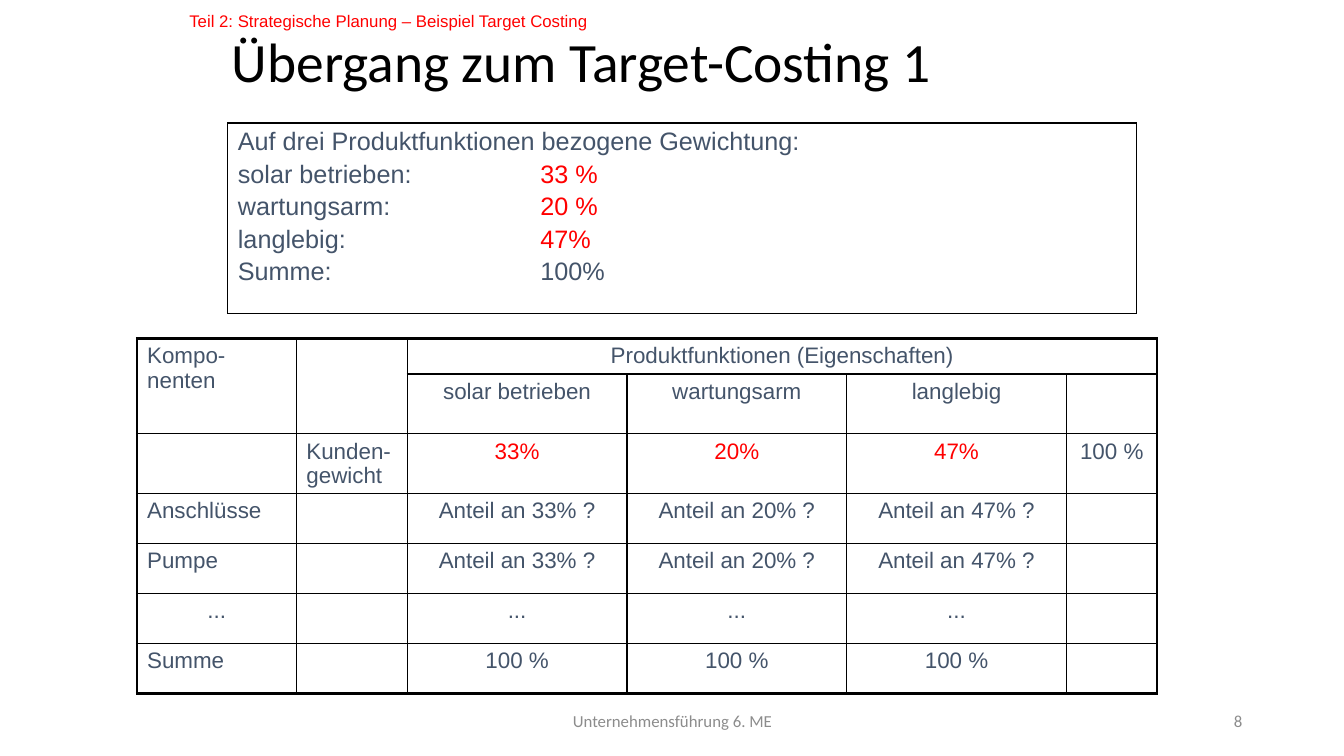
from dataclasses import dataclass

from lxml import etree
from pptx import Presentation
from pptx import util as u
from pptx.dml.color import RGBColor
from pptx.enum import text
from pptx.oxml import ns

BLACK = RGBColor(0x00, 0x00, 0x00)
SLATE = RGBColor(0x44, 0x54, 0x6A)
RED = RGBColor(0xFF, 0x00, 0x00)
GREY = RGBColor(0x8C, 0x8C, 0x8C)

SLIDE_WIDTH, SLIDE_HEIGHT = u.Inches(13.33), u.Inches(7.5)
LEFT, CENTER, RIGHT = text.PP_ALIGN.LEFT, text.PP_ALIGN.CENTER, text.PP_ALIGN.RIGHT
TOP, MIDDLE = text.MSO_ANCHOR.TOP, text.MSO_ANCHOR.MIDDLE
INNER_LINE, OUTER_LINE = 1, 2.25


def across(percent: float) -> int:
    return round(SLIDE_WIDTH * percent / 100)


def down(percent: float) -> int:
    return round(SLIDE_HEIGHT * percent / 100)


@dataclass(frozen=True)
class Box:
    """A frame in percent of the slide's width and height."""
    left: float
    top: float
    width: float
    height: float

    def emu(self) -> tuple[int, int, int, int]:
        return across(self.left), down(self.top), across(self.width), down(self.height)


@dataclass(frozen=True)
class Label:
    box: Box
    wording: str
    font: str
    color: RGBColor
    alignment: text.PP_ALIGN
    anchor: text.MSO_ANCHOR


@dataclass(frozen=True)
class Weight:
    name: str
    value: str
    color: RGBColor = RED


LABELS = [
    Label(Box(33.16, 92.67, 33.76, 5.33), "Unternehmensführung 6. ME",
          "Calibri", GREY, CENTER, MIDDLE),
    Label(Box(70.67, 92.67, 22.51, 5.33), "8", "Calibri", GREY, RIGHT, MIDDLE),
    Label(Box(13.35, 0.8, 35.71, 4), "Teil 2: Strategische Planung – Beispiel Target Costing",
          "Arial", RED, LEFT, TOP),
]
TITLE_BOX = Box(16.5, 4.13, 66.69, 8.93)

WEIGHTS_BOX = Box(16.95, 16.27, 67.59, 25.2)
WEIGHTS = [
    Weight("solar betrieben:", "33 %"),
    Weight("wartungsarm:", "20 %"),
    Weight("langlebig:", "47%"),
    Weight("Summe:", "100%", SLATE),
]
VALUE_TAB = across(22.5)

COMPONENTS_BOX = Box(10.2, 44.8, 75.9, 46.81)
COLUMN_SHARES = [11.85, 8.25] + [16.35] * 3 + [6.75]
ROW_SHARES = [4.67] + [7.87] * 2 + [6.6] * 4
SHARES = ["33%", "20%", "47%"]
QUESTIONS = [f"Anteil an {share} ?" for share in SHARES]
COMPONENTS = [
    ["Kompo-nenten", "", "Produktfunktionen (Eigenschaften)", "", "", ""],
    ["", "", "solar betrieben", "wartungsarm", "langlebig", ""],
    ["", "Kunden-gewicht", *SHARES, "100 %"],
    ["Anschlüsse", "", *QUESTIONS, ""],
    ["Pumpe", "", *QUESTIONS, ""],
    ["...", "", *["..."] * 3, ""],
    ["Summe", "", *["100 %"] * 3, ""],
]
MERGES = [((0, 0), (1, 0)), ((0, 1), (1, 1)), ((0, 2), (0, 5))]


def style(paragraph, font: str, size: float, color: RGBColor,
          alignment: text.PP_ALIGN = LEFT) -> None:
    paragraph.alignment = alignment
    paragraph.font.name = font
    paragraph.font.size = u.Pt(size)
    paragraph.font.color.rgb = color


def add_label(slide, label: Label) -> None:
    frame = slide.shapes.add_textbox(*label.box.emu()).text_frame
    frame.word_wrap = True
    frame.vertical_anchor = label.anchor
    frame.text = label.wording
    style(frame.paragraphs[0], label.font, 12, label.color, label.alignment)


def add_title(slide) -> None:
    title = slide.shapes.title
    title.left, title.top, title.width, title.height = TITLE_BOX.emu()
    frame = title.text_frame
    frame.text = "Übergang zum Target-Costing 1"
    frame.auto_size = text.MSO_AUTO_SIZE.NONE
    frame.vertical_anchor = MIDDLE
    paragraph = frame.paragraphs[0]
    style(paragraph, "Calibri", 39.6, BLACK)
    paragraph.line_spacing = 0.9


def add_plain_table(slide, box: Box, rows: int, columns: int):
    table = slide.shapes.add_table(rows, columns, *box.emu()).table
    table.first_row = table.horz_banding = False
    return table


def draw_borders(cell, left: float, right: float, top: float, bottom: float) -> None:
    """Clear the cell's fill and give its four edges black lines, in points."""
    cell.fill.background()
    properties = cell._tc.get_or_add_tcPr()
    edges = {"a:lnL": left, "a:lnR": right, "a:lnT": top, "a:lnB": bottom}
    for position, (tag, width) in enumerate(edges.items()):
        line = etree.Element(ns.qn(tag), w=str(u.Pt(width)))
        fill = etree.SubElement(line, ns.qn("a:solidFill"))
        etree.SubElement(fill, ns.qn("a:srgbClr"), val=str(BLACK))
        properties.insert(position, line)


def set_tab(paragraph, position: int) -> None:
    tabs = etree.Element(ns.qn("a:tabLst"))
    etree.SubElement(tabs, ns.qn("a:tab"), pos=str(position), algn="l")
    properties = paragraph._p.get_or_add_pPr()
    properties.find(ns.qn("a:defRPr")).addprevious(tabs)


def add_weights(slide) -> None:
    cell = add_plain_table(slide, WEIGHTS_BOX, 1, 1).cell(0, 0)
    draw_borders(cell, *[INNER_LINE] * 4)
    frame = cell.text_frame
    frame.text = "Auf drei Produktfunktionen bezogene Gewichtung:"
    style(frame.paragraphs[0], "Arial", 18, SLATE)
    for weight in WEIGHTS:
        paragraph = frame.add_paragraph()
        style(paragraph, "Arial", 18, SLATE)
        paragraph.space_before = u.Pt(3)
        set_tab(paragraph, VALUE_TAB)
        paragraph.add_run().text = f"{weight.name}\t"
        value = paragraph.add_run()
        value.text = weight.value
        value.font.color.rgb = weight.color


def add_components(slide) -> None:
    last_row, last_column = len(ROW_SHARES) - 1, len(COLUMN_SHARES) - 1
    table = add_plain_table(slide, COMPONENTS_BOX, last_row + 1, last_column + 1)
    for column, share in zip(table.columns, COLUMN_SHARES):
        column.width = across(share)
    for row, share in zip(table.rows, ROW_SHARES):
        row.height = down(share)
    for start, end in MERGES:
        table.cell(*start).merge(table.cell(*end))

    for r, wordings in enumerate(COMPONENTS):
        for c, wording in enumerate(wordings):
            cell = table.cell(r, c)
            cell.text = wording
            centred = c > 1 or wording == "..."
            style(cell.text_frame.paragraphs[0], "Arial", 16,
                  RED if wording in SHARES else SLATE, CENTER if centred else LEFT)
            right_end = c + cell.span_width - 1 if cell.is_merge_origin else c
            outer = (c == 0, right_end == last_column, r == 0, r == last_row)
            draw_borders(cell, *[OUTER_LINE if edge else INNER_LINE for edge in outer])


def main() -> None:
    presentation = Presentation()
    presentation.slide_width, presentation.slide_height = SLIDE_WIDTH, SLIDE_HEIGHT
    slide = presentation.slides.add_slide(presentation.slide_layouts[5])
    add_title(slide)
    add_weights(slide)
    add_components(slide)
    for label in LABELS:
        add_label(slide, label)
    presentation.save("out.pptx")


if __name__ == "__main__":
    main()
